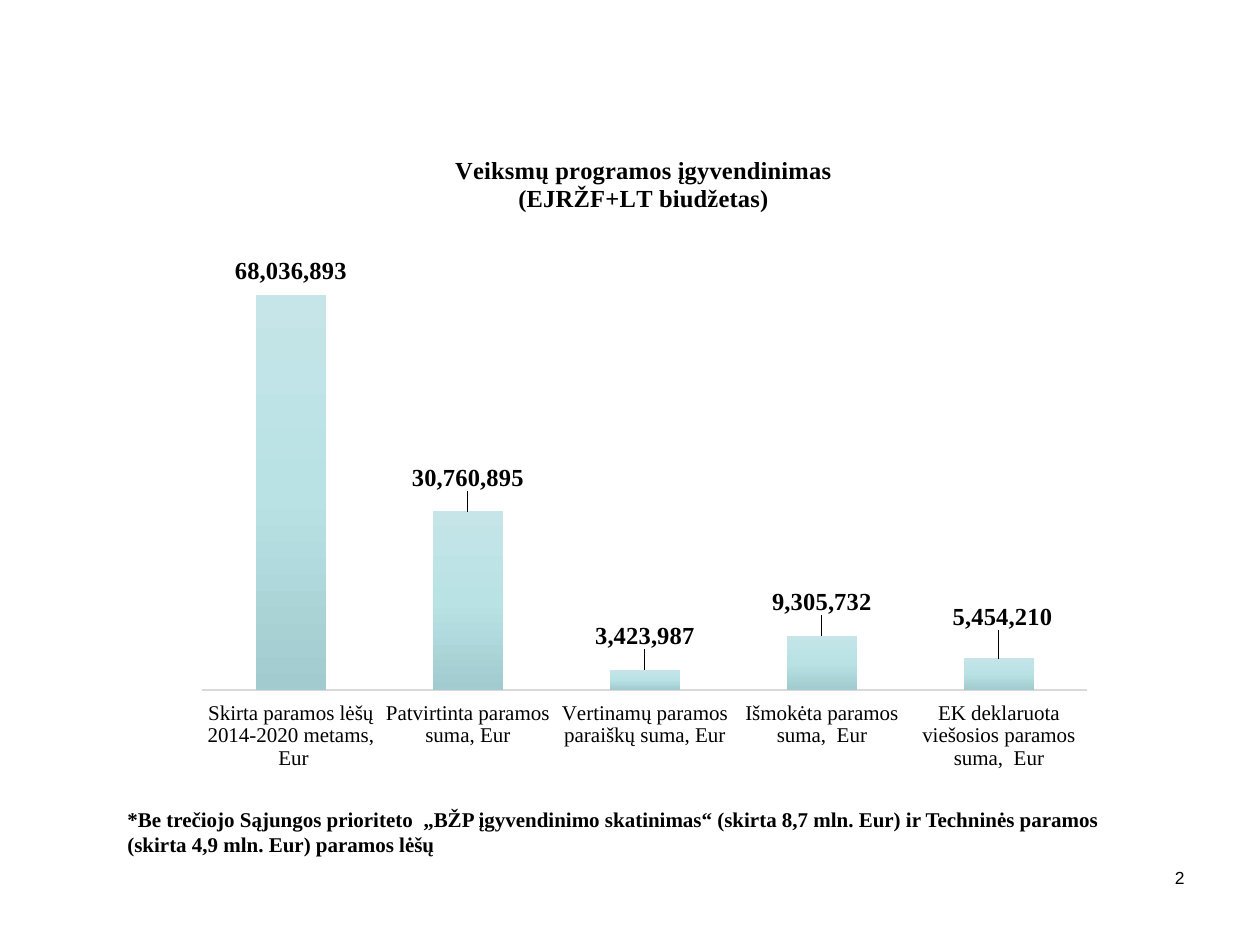
from copy import deepcopy

from lxml import etree
from pptx import Presentation
from pptx.chart.data import CategoryChartData
from pptx.dml.color import RGBColor
from pptx.enum.chart import XL_CHART_TYPE as ChartType, XL_LABEL_POSITION as LabelPos
from pptx.enum.chart import XL_TICK_LABEL_POSITION as TickLabels, XL_TICK_MARK as TickMark
from pptx.enum.text import PP_ALIGN as Align
from pptx.oxml.ns import qn
from pptx.util import Emu, Pt

PX_PER_INCH = 126
BLACK = RGBColor(0x00, 0x00, 0x00)
AXIS_GREY = RGBColor(0xD9, 0xD9, 0xD9)
BAR_STOPS = [
    (0, RGBColor(0xC5, 0xE5, 0xE8)),
    (0.5, RGBColor(0xB9, 0xE2, 0xE5)),
    (1, RGBColor(0xA1, 0xCB, 0xCE)),
]
SERIF, SANS = "Times New Roman", "Arial"
NUMBER_FORMAT = "#,##0"

TITLE = ["Veiksmų programos įgyvendinimas", "(EJRŽF+LT biudžetas)"]
# category, value, label shift in px (right, down)
AMOUNTS = [
    ("Skirta paramos lėšų 2014-2020 metams,  Eur", 68036893, (0, -6)),
    ("Patvirtinta paramos suma, Eur", 30760895, (0, -15)),
    ("Vertinamų paramos paraiškų suma, Eur", 3423987, (0, -15)),
    ("Išmokėta paramos suma,  Eur", 9305732, (0, -15)),
    ("EK deklaruota viešosios paramos suma,  Eur", 5454210, (4, -23)),
]
FOOTNOTE = (
    "*Be trečiojo Sąjungos prioriteto  „BŽP įgyvendinimo skatinimas“ "
    "(skirta 8,7 mln. Eur) ir Techninės paramos (skirta 4,9 mln. Eur) paramos lėšų"
)


def px(length):
    return Emu(round(length * 914400 / PX_PER_INCH))


def style_font(font, name=SERIF, size=12, bold=False):
    font.name, font.size, font.bold = name, Pt(size), bold
    font.color.rgb = BLACK


def add_text(page, box, text, align=Align.LEFT, **font_format):
    frame = page.shapes.add_textbox(*map(px, box)).text_frame
    frame.word_wrap = True
    para = frame.paragraphs[0]
    para.alignment = align
    span = para.add_run()
    span.text = text
    style_font(span.font, **font_format)


def make_layout(**settings):
    """Return a c:layout element with the given manual settings, in order."""
    layout = etree.Element(qn("c:layout"))
    manual = etree.SubElement(layout, qn("c:manualLayout"))
    for name, value in settings.items():
        etree.SubElement(manual, qn(f"c:{name}")).set("val", str(value))
    return layout


def add_title(chart, x, y):
    frame = chart.chart_title.text_frame
    for index, line in enumerate(TITLE):
        para = frame.add_paragraph() if index else frame.paragraphs[0]
        span = para.add_run()
        span.text = line
        style_font(span.font, size=14, bold=True)
    chart.chart_title.include_in_layout = False
    title = chart.chart_title._element
    for old in title.findall(qn("c:layout")):
        title.remove(old)
    title.find(qn("c:tx")).addnext(make_layout(xMode="edge", yMode="edge", x=x, y=y))


def fill_bars(series):
    fill = series.format.fill
    fill.gradient()
    fill.gradient_angle = 270
    stop_list = series._element.find(".//" + qn("a:gsLst"))
    stop_list.append(deepcopy(stop_list[-1]))
    for stop, (position, color) in zip(fill.gradient_stops, BAR_STOPS):
        stop.position = position
        stop.color.rgb = color


def label_bars(series, width, height):
    labels = series.data_labels
    labels.show_value = True
    labels.number_format, labels.number_format_is_linked = NUMBER_FORMAT, False
    labels.position = LabelPos.OUTSIDE_END
    style_font(labels.font, size=14, bold=True)
    for index in range(len(AMOUNTS)):
        label = series.points[index].data_label
        style_font(label.font, size=14, bold=True)
        label.position = LabelPos.OUTSIDE_END
    for element, (_, _, (right, down)) in zip(series._element.xpath(".//c:dLbl"), AMOUNTS):
        layout = make_layout(x=round(right / width, 3), y=round(down / height, 3))
        element.find(qn("c:idx")).addnext(layout)
        number = etree.Element(qn("c:numFmt"), formatCode=NUMBER_FORMAT, sourceLinked="0")
        layout.addnext(number)


def format_axes(chart):
    amounts = chart.value_axis
    amounts.minimum_scale, amounts.maximum_scale = 0, 80_000_000
    amounts.has_major_gridlines = False
    amounts.visible = False
    names = chart.category_axis
    names.major_tick_mark = names.minor_tick_mark = TickMark.NONE
    names.tick_label_position = TickLabels.LOW
    names.format.line.color.rgb = AXIS_GREY
    names.format.line.width = Pt(1)
    style_font(names.tick_labels.font)


def add_amounts_chart(page, box):
    data = CategoryChartData(number_format=NUMBER_FORMAT)
    data.categories = [name for name, _, _ in AMOUNTS]
    data.add_series("Series 1", [value for _, value, _ in AMOUNTS])
    chart = page.shapes.add_chart(ChartType.COLUMN_CLUSTERED, *map(px, box), data).chart
    style_font(chart.font, name=SANS, size=10)
    chart.has_legend = False
    add_title(chart, x=0.29, y=0.04)
    format_axes(chart)

    plot = chart.plots[0]
    plot.gap_width = 150
    plot.vary_by_categories = False
    fill_bars(plot.series[0])
    label_bars(plot.series[0], *box[2:])

    area = chart._chartSpace.find(".//" + qn("c:plotArea"))
    for old in area.findall(qn("c:layout")):
        area.remove(old)
    area.insert(0, make_layout(layoutTarget="inner", xMode="edge", yMode="edge",
                               x=0.02, y=0.155, w=0.96, h=0.714))


def main():
    deck = Presentation()
    deck.slide_width, deck.slide_height = px(1260), px(945)
    page = deck.slides.add_slide(deck.slide_layouts[6])
    add_text(page, (903, 861, 294, 65), "2", align=Align.RIGHT, name=SANS, size=10)
    add_text(page, (115, 800, 1012, 102), FOOTNOTE, bold=True)
    add_amounts_chart(page, (184, 125, 922, 650))
    deck.save("out.pptx")


if __name__ == "__main__":
    main()
